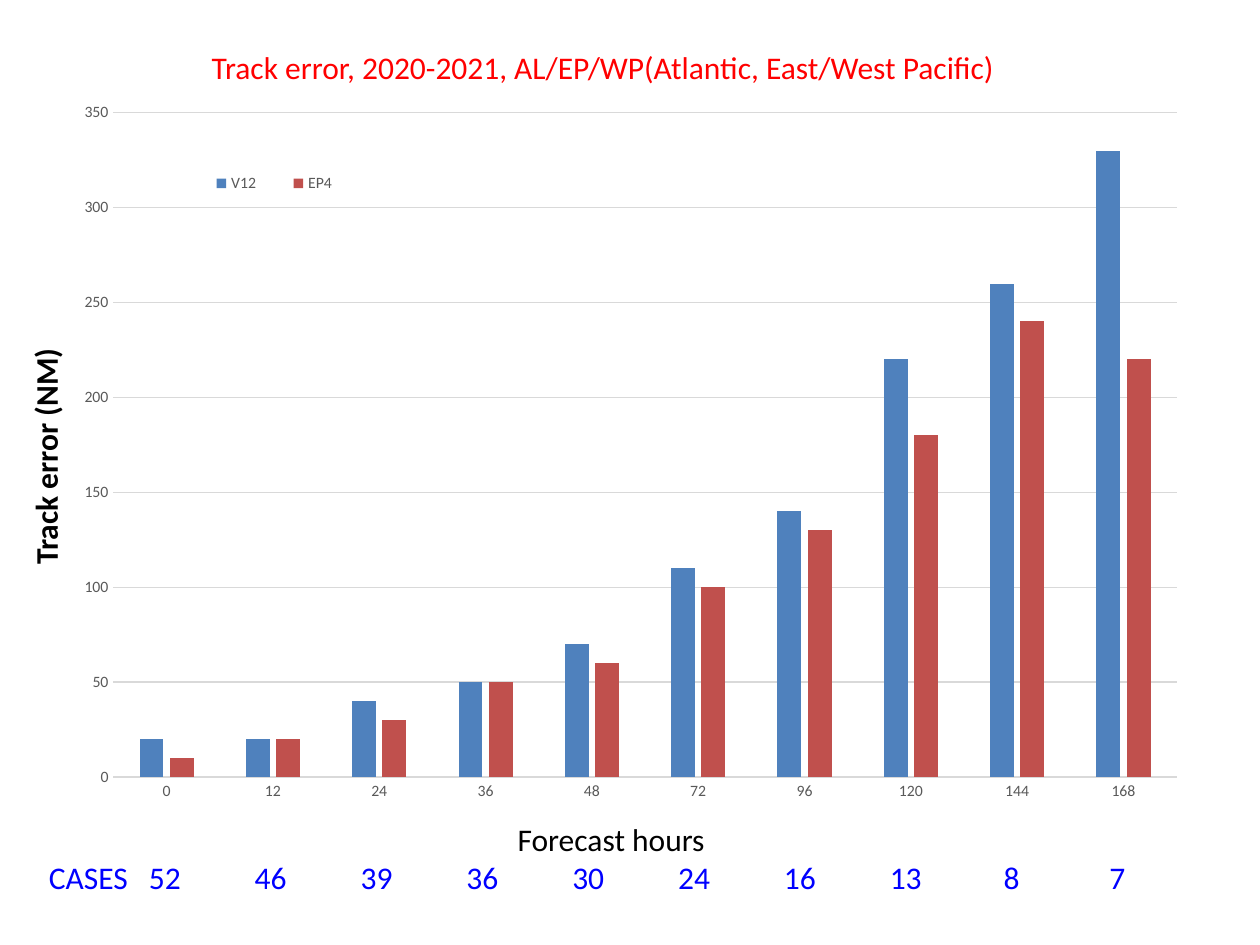
from dataclasses import dataclass

import lxml.etree
import pptx
import pptx.chart.data
import pptx.dml.color
import pptx.enum.chart
import pptx.enum.text
import pptx.oxml.ns
import pptx.util
from pptx.util import Inches


@dataclass(frozen=True)
class Theme:
    font: str = "Calibri"
    text_size: int = 18
    chart_size: int = 10
    axis_size: int = 9
    black: str = "000000"
    title: str = "FF0000"
    cases: str = "0000FF"
    axis_text: str = "595959"
    grid: str = "D9D9D9"
    series: tuple = ("4F81BD", "C0504D")


THEME = Theme()
HOURS = ("0", "12", "24", "36", "48", "72", "96", "120", "144", "168")
TRACK_ERRORS = {
    "V12": (20, 20, 40, 50, 70, 110, 140, 220, 260, 330),
    "EP4": (10, 20, 30, 50, 60, 100, 130, 180, 240, 220),
}
CASES = (52, 46, 39, 36, 30, 24, 16, 13, 8, 7)


def rgb(color):
    return pptx.dml.color.RGBColor.from_string(color)


def style_font(font, size, color, bold=False):
    font.name = THEME.font
    font.size = pptx.util.Pt(size)
    font.bold = bold
    font.color.rgb = rgb(color)


def style_paragraph(paragraph, color, bold=False, alignment=pptx.enum.text.PP_ALIGN.LEFT):
    paragraph.alignment = alignment
    for run in paragraph.runs:
        style_font(run.font, THEME.text_size, color, bold)


def place(shape, left, top, width, height):
    shape.left, shape.top = Inches(left), Inches(top)
    shape.width, shape.height = Inches(width), Inches(height)


def add_title(slide, text):
    title = slide.shapes.title
    place(title, 1.58, 0.33, 6.5, 0.4)
    title.text_frame.text = text
    title.text_frame.vertical_anchor = pptx.enum.text.MSO_ANCHOR.TOP
    title.text_frame.auto_size = pptx.enum.text.MSO_AUTO_SIZE.NONE
    style_paragraph(title.text_frame.paragraphs[0], THEME.title)


def add_text_box(slide, left, top, width, height, wrap=True):
    box = slide.shapes.add_textbox(Inches(left), Inches(top), Inches(width), Inches(height))
    box.text_frame.word_wrap = wrap
    return box


def add_axis_label(slide, text):
    box = add_text_box(slide, -0.6, 3.41, 1.93, 0.41, wrap=False)
    box.rotation = 270
    box.text_frame.text = text
    style_paragraph(box.text_frame.paragraphs[0], THEME.black, bold=True)


def add_tab_stops(paragraph, first, step, count):
    qn = pptx.oxml.ns.qn
    tabs = lxml.etree.SubElement(paragraph._p.get_or_add_pPr(), qn("a:tabLst"))
    for index in range(count):
        position = Inches(first + index * step)
        lxml.etree.SubElement(tabs, qn("a:tab"), pos=str(position), algn="ctr")


def add_case_counts(slide, heading, label, counts):
    frame = add_text_box(slide, 0.29, 6.46, 9.12, 0.71).text_frame
    frame.text = heading
    style_paragraph(frame.paragraphs[0], THEME.black,
                    alignment=pptx.enum.text.PP_ALIGN.CENTER)
    paragraph = frame.add_paragraph()
    paragraph.text = "\t".join([label, *map(str, counts)])
    style_paragraph(paragraph, THEME.cases)
    add_tab_stops(paragraph, first=0.92, step=0.84, count=len(counts))


def set_layout(parent, index, left, top, width, height, inner=False):
    qn = pptx.oxml.ns.qn
    for old_layout in parent.findall(qn("c:layout")):
        parent.remove(old_layout)
    layout = lxml.etree.Element(qn("c:layout"))
    manual = lxml.etree.SubElement(layout, qn("c:manualLayout"))
    settings = [("layoutTarget", "inner")] if inner else []
    settings += [("xMode", "edge"), ("yMode", "edge"),
                 ("x", left), ("y", top), ("w", width), ("h", height)]
    for name, value in settings:
        lxml.etree.SubElement(manual, qn(f"c:{name}"), val=str(value))
    parent.insert(index, layout)


def style_line(line):
    line.color.rgb = rgb(THEME.grid)
    line.width = pptx.util.Pt(0.75)


def style_axes(chart):
    for axis in (chart.category_axis, chart.value_axis):
        axis.major_tick_mark = pptx.enum.chart.XL_TICK_MARK.NONE
        axis.minor_tick_mark = pptx.enum.chart.XL_TICK_MARK.NONE
        style_font(axis.tick_labels.font, THEME.axis_size, THEME.axis_text)
    style_line(chart.category_axis.format.line)
    value_axis = chart.value_axis
    value_axis.minimum_scale, value_axis.maximum_scale = 0, 350
    value_axis.major_unit = 50
    value_axis.format.line.fill.background()
    style_line(value_axis.major_gridlines.format.line)


def add_legend(chart):
    chart.has_legend = True
    legend = chart.legend
    legend.position = pptx.enum.chart.XL_LEGEND_POSITION.BOTTOM
    legend.include_in_layout = False
    style_font(legend.font, THEME.axis_size, THEME.axis_text)
    set_layout(legend._element, 1, 0.1, 0.1, 0.16, 0.05)


def add_error_chart(slide):
    data = pptx.chart.data.CategoryChartData()
    data.categories = HOURS
    for name, values in TRACK_ERRORS.items():
        data.add_series(name, values)
    chart = slide.shapes.add_chart(
        pptx.enum.chart.XL_CHART_TYPE.COLUMN_CLUSTERED,
        Inches(0.57), Inches(0.74), Inches(8.93), Inches(5.72), data).chart
    chart.has_title = False
    style_font(chart.font, THEME.chart_size, THEME.black)
    plot = chart.plots[0]
    plot.vary_by_categories = False
    plot.gap_width, plot.overlap = 219, -27
    for series, color in zip(plot.series, THEME.series):
        series.format.fill.solid()
        series.format.fill.fore_color.rgb = rgb(color)
    style_axes(chart)
    add_legend(chart)
    plot_area = chart._chartSpace.chart.plotArea
    set_layout(plot_area, 0, 0.037, 0.027, 0.945, 0.922, inner=True)


def main():
    presentation = pptx.Presentation()
    presentation.slide_width, presentation.slide_height = Inches(10), Inches(7.5)
    slide = presentation.slides.add_slide(presentation.slide_layouts[5])
    add_title(slide, "Track error, 2020-2021, AL/EP/WP(Atlantic, East/West Pacific)")
    add_axis_label(slide, "Track error (NM)")
    add_case_counts(slide, "Forecast hours", "CASES", CASES)
    add_error_chart(slide)
    presentation.save("out.pptx")


if __name__ == "__main__":
    main()
